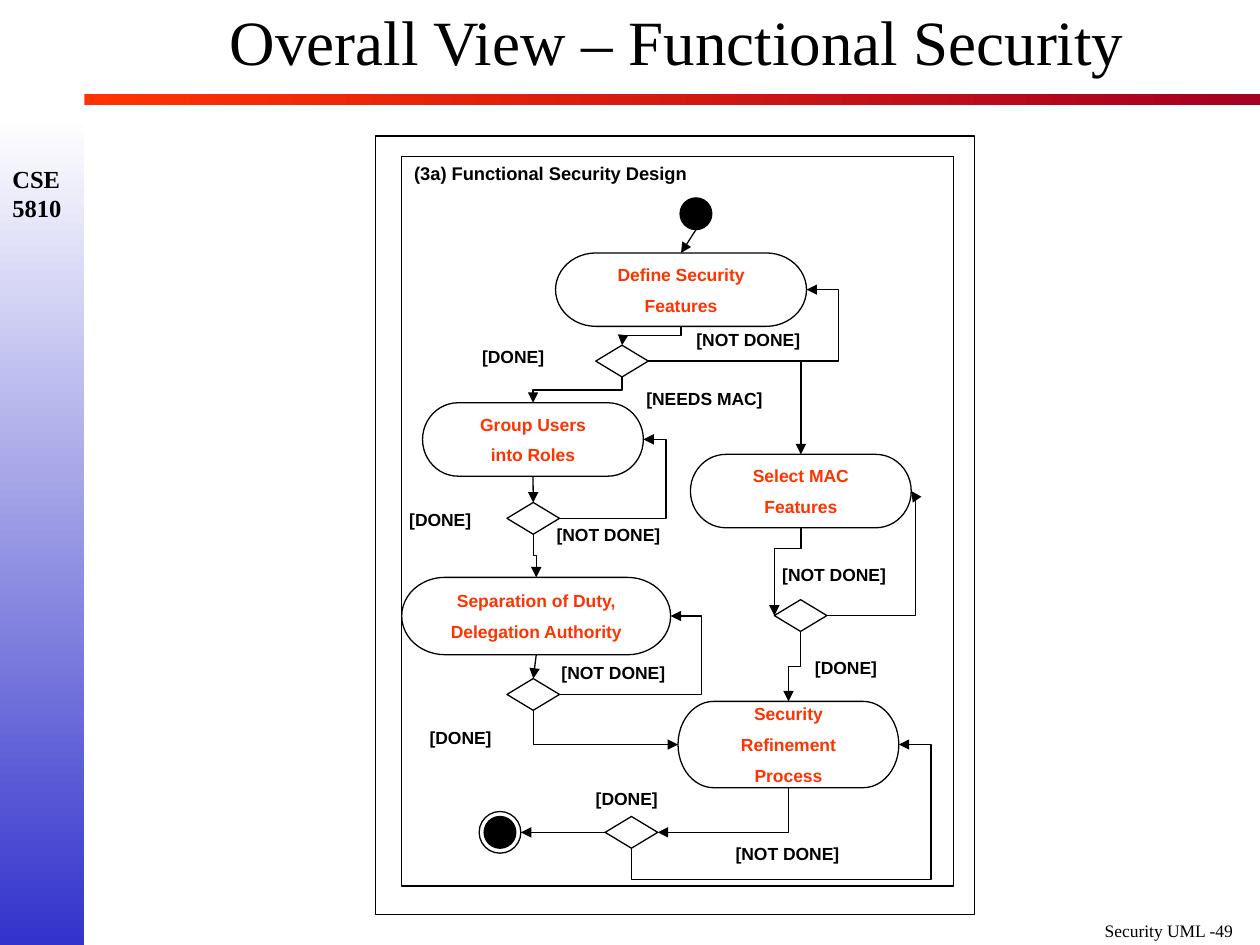
from lxml.etree import SubElement
from pptx import Presentation
from pptx.dml.color import RGBColor
from pptx.enum.shapes import MSO_CONNECTOR, MSO_SHAPE
from pptx.enum.text import MSO_ANCHOR, PP_ALIGN
from pptx.oxml.ns import qn
from pptx.util import Cm, Pt

BLACK = RGBColor(0, 0, 0)
WHITE = RGBColor(0xFF, 0xFF, 0xFF)
BLUE = RGBColor(0x33, 0x33, 0xCC)
ORANGE = RGBColor(0xFF, 0x33, 0x00)
CRIMSON = RGBColor(0xA5, 0x00, 0x21)
SERIF, SANS = "Times New Roman", "Arial"
TOP, LEFT, BOTTOM, RIGHT = range(4)
SIDE_FRACTIONS = [(0.5, 0), (0, 0.5), (0.5, 1), (1, 0.5)]

deck = Presentation()
deck.slide_width, deck.slide_height = Cm(25.4), Cm(19.05)
page = deck.slides.add_slide(deck.slide_layouts[6])


def write(box, lines, size, font=SANS, colour=BLACK, bold=True, align=PP_ALIGN.LEFT, gap=0):
    """Put one paragraph per line in the box, with gap points between them."""
    frame = box.text_frame
    frame.text = "\n".join(lines)
    for index, paragraph in enumerate(frame.paragraphs):
        paragraph.alignment = align
        if index and gap:
            paragraph.space_before = Pt(gap)
        paragraph.font.name = font
        paragraph.font.size = Pt(size)
        paragraph.font.bold = bold
        paragraph.font.color.rgb = colour


def add_outline(kind, left, top, width, height, colour=WHITE):
    """Add a preset shape with a thin black line and a plain fill."""
    shape = page.shapes.add_shape(kind, Cm(left), Cm(top), Cm(width), Cm(height))
    shape.shadow.inherit = False
    shape.fill.solid()
    shape.fill.fore_color.rgb = colour
    shape.line.color.rgb = BLACK
    shape.line.width = Pt(0.75)
    return shape


# Side band and rule under the title
for left, top, width, height, first, last, angle in [
    (0, 2.34, 1.7, 16.71, WHITE, BLUE, 270),
    (1.7, 1.9, 23.7, 0.21, ORANGE, CRIMSON, 0),
]:
    band = page.shapes.add_shape(MSO_SHAPE.RECTANGLE, Cm(left), Cm(top), Cm(width), Cm(height))
    band.shadow.inherit = False
    band.line.fill.background()
    band.fill.gradient()
    band.fill.gradient_angle = angle
    for stop, colour in zip(band.fill.gradient_stops, (first, last)):
        stop.color.rgb = colour

footer = page.shapes.add_textbox(Cm(22.02), Cm(18.42), Cm(3.38), Cm(0.66))
footer.text_frame.word_wrap = True
write(footer, ["Security UML -49"], 10, SERIF, bold=False)

course = page.shapes.add_textbox(Cm(0), Cm(3.18), Cm(1.7), Cm(1.45))
course.text_frame.word_wrap = True
write(course, ["CSE", "5810"], 14, SERIF)

title = page.shapes.add_textbox(Cm(1.8), Cm(0), Cm(23.7), Cm(1.9))
title.text_frame.word_wrap = True
title.text_frame.vertical_anchor = MSO_ANCHOR.MIDDLE
write(title, ["Overall View – Functional Security"], 36, SERIF, bold=False, align=PP_ALIGN.CENTER)
title.text_frame.paragraphs[0].line_spacing = 0.8

# Frames, start and end marks
add_outline(MSO_SHAPE.RECTANGLE, 7.57, 2.74, 12.07, 15.7)
add_outline(MSO_SHAPE.RECTANGLE, 8.1, 3.15, 11.12, 14.71)
start = add_outline(MSO_SHAPE.FLOWCHART_CONNECTOR, 13.71, 3.99, 0.64, 0.64, BLACK)
end = add_outline(MSO_SHAPE.FLOWCHART_CONNECTOR, 9.66, 16.36, 0.84, 0.84)
add_outline(MSO_SHAPE.FLOWCHART_CONNECTOR, 9.76, 16.46, 0.64, 0.64, BLACK)

# Activities, each with the decision that follows it
activities, decisions = {}, {}
for name, left, top, width, height, lines, decision_left, decision_top in [
    ("define", 11.2, 5.1, 5.06, 1.48, ["Define Security", "Features"], 12.01, 6.96),
    ("group", 8.52, 8.12, 4.45, 1.48, ["Group Users", "into Roles"], 10.22, 10.13),
    ("separate", 8.1, 11.64, 5.42, 1.56, ["Separation of Duty,", "Delegation Authority"], 10.22, 13.68),
    ("select", 13.92, 9.16, 4.45, 1.48, ["Select MAC", "Features"], 15.61, 12.09),
    ("refine", 13.67, 14.14, 4.45, 1.74, ["Security", "Refinement", "Process"], 12.2, 16.46),
]:
    activity = add_outline(MSO_SHAPE.FLOWCHART_TERMINATOR, left, top, width, height)
    activity.text_frame.word_wrap = False
    activity.text_frame.vertical_anchor = MSO_ANCHOR.MIDDLE
    write(activity, lines, 10, colour=ORANGE, align=PP_ALIGN.CENTER, gap=5.6)
    activities[name] = activity
    decisions[name] = add_outline(MSO_SHAPE.FLOWCHART_DECISION, decision_left, decision_top, 1.06, 0.64)

# Straight arrows
arrows = []
for source, source_side, target, target_side in [
    (start, BOTTOM, activities["define"], TOP),
    (activities["group"], BOTTOM, decisions["group"], TOP),
    (activities["separate"], BOTTOM, decisions["separate"], TOP),
    (decisions["refine"], LEFT, end, RIGHT),
]:
    ends = []
    for shape, side in ((source, source_side), (target, target_side)):
        across, down = SIDE_FRACTIONS[side]
        ends += [int(shape.left + across * shape.width), int(shape.top + down * shape.height)]
    arrow = page.shapes.add_connector(MSO_CONNECTOR.STRAIGHT, *ends)
    if source is not start:
        arrow.begin_connect(source, source_side)
    if target is not end:
        arrow.end_connect(target, target_side)
    arrows.append(arrow)

# Bent arrows: the adjustments place the inner segments, as shares of the span
for source, source_side, target, target_side, adjustments in [
    (activities["define"], BOTTOM, decisions["define"], TOP, [0.5]),
    (decisions["define"], BOTTOM, activities["group"], TOP, [0.5]),
    (decisions["define"], RIGHT, activities["define"], RIGHT, [1.2]),
    (decisions["define"], RIGHT, activities["select"], TOP, []),
    (decisions["group"], RIGHT, activities["group"], RIGHT, [1.27]),
    (decisions["group"], BOTTOM, activities["separate"], TOP, [0.5]),
    (decisions["separate"], RIGHT, activities["separate"], RIGHT, [1.28]),
    (decisions["separate"], BOTTOM, activities["refine"], LEFT, []),
    (activities["select"], BOTTOM, decisions["select"], LEFT, [0.24, 1]),
    (decisions["select"], RIGHT, activities["select"], RIGHT, [1.05]),
    (decisions["select"], BOTTOM, activities["refine"], TOP, [0.5]),
    (activities["refine"], BOTTOM, decisions["refine"], RIGHT, []),
    (decisions["refine"], BOTTOM, activities["refine"], RIGHT, [-0.3, 1.12]),
]:
    ends = []
    for shape, side in ((source, source_side), (target, target_side)):
        across, down = SIDE_FRACTIONS[side]
        ends += [int(shape.left + across * shape.width), int(shape.top + down * shape.height)]
    arrow = page.shapes.add_connector(MSO_CONNECTOR.ELBOW, *ends)
    properties = arrow._element.spPr
    if source_side == BOTTOM:
        # A path that leaves downwards is a sideways one turned about its centre
        rightward, downward = ends[2] > ends[0], ends[3] > ends[1]
        width, height = arrow.width, arrow.height
        arrow.left += (width - height) // 2
        arrow.top += (height - width) // 2
        arrow.width, arrow.height = height, width
        frame = properties.find(qn("a:xfrm"))
        frame.set("rot", str((270 if rightward and downward else 90) * 60000))
        frame.set("flipH", str(int(rightward)))
        frame.set("flipV", str(int(rightward and not downward)))
    geometry = properties.find(qn("a:prstGeom"))
    geometry.set("prst", f"bentConnector{len(adjustments) + 2}")
    guides = geometry.find(qn("a:avLst"))
    for number, share in enumerate(adjustments, 1):
        SubElement(guides, qn("a:gd"), name=f"adj{number}", fmla=f"val {round(share * 100000)}")
    arrows.append(arrow)

for arrow in arrows:
    arrow.line.color.rgb = BLACK
    arrow.line.width = Pt(0.75)
    SubElement(arrow.line._get_or_add_ln(), qn("a:tailEnd"), type="triangle")
    SubElement(arrow._element.spPr, qn("a:effectLst"))

# Heading and branch labels
for text, width, size, places in [
    ("(3a) Functional Security Design", 6.1, 10.5, [(8.1, 3.15)]),
    ("[NEEDS MAC]", 2.9, 10, [(12.78, 7.7)]),
    ("[DONE]", 1.78, 10, [(9.47, 6.86), (8, 10.13), (8.41, 14.53), (16.18, 13.11), (11.76, 15.77)]),
    ("[NOT DONE]", 2.64, 10, [(13.79, 6.5), (10.97, 10.44), (11.07, 13.23), (15.52, 11.25), (14.58, 16.87)]),
]:
    for left, top in places:
        label = page.shapes.add_textbox(Cm(left), Cm(top), Cm(width), Cm(0.68))
        label.text_frame.word_wrap = False
        write(label, [text], size)

deck.save("out.pptx")
